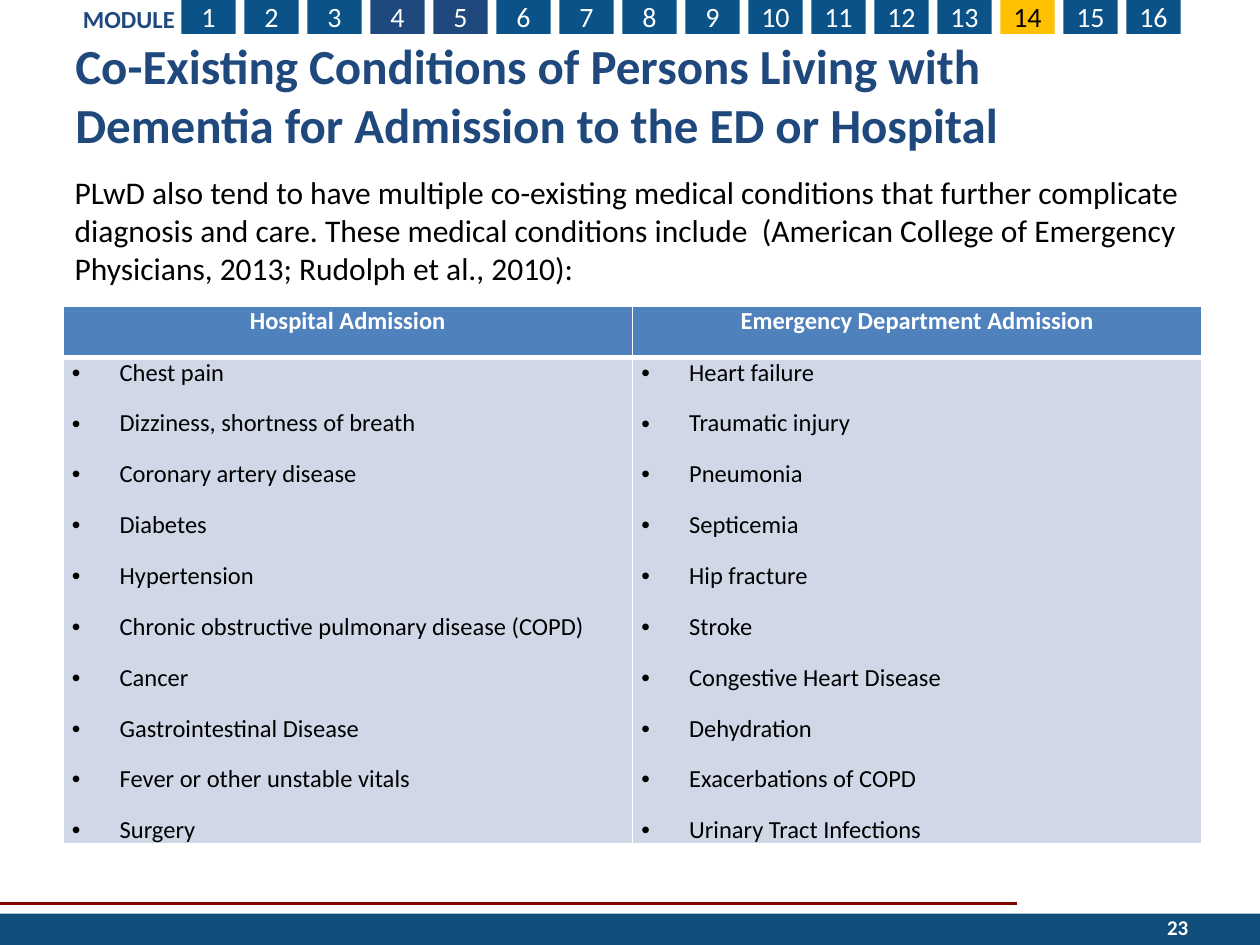
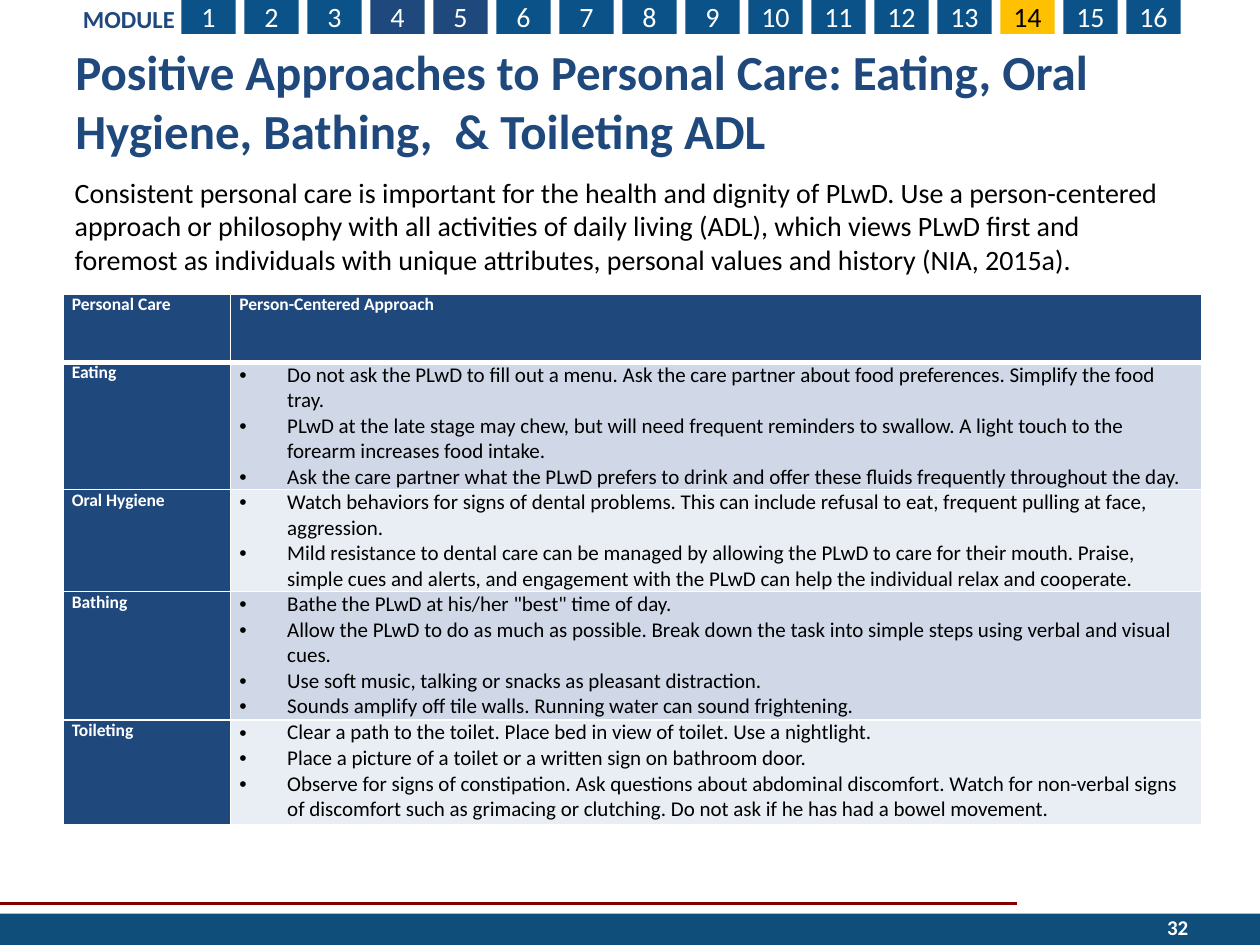
from collections import namedtuple

from lxml.etree import SubElement as Sub
from pptx import Presentation
from pptx.dml.color import RGBColor as Rgb
from pptx.enum.shapes import MSO_CONNECTOR as Connector, MSO_SHAPE as Shape
from pptx.enum.text import MSO_ANCHOR as Anchor, PP_ALIGN as Align
from pptx.oxml.ns import qn
from pptx.util import Emu, Inches, Pt

COLORS = {
    "white": "FFFFFF", "black": "000000", "navy": "1F497D", "tab": "0A5287",
    "current": "FFC000", "footer": "0F4D7B", "rule": "800000",
    "header": "4F81BD", "band": "D0D8E8", "light": "E9EDF4",
}
FONT, BULLET_FONT = "Calibri", "Arial"
WIDTH, HEIGHT = Inches(10), Inches(7.5)
COLUMNS, ROWS = 100, 75
MODULES, CURRENT, NAVY_MODULES = 16, 14, (4, 5)
HANG = Inches(0.38)

Box = namedtuple("Box", "left top width height")
NAVIGATION = Box(5.6, -0.1, 88.1, 2.8)
FOOTER = Box(0, 71.6, 100, 3.4)


def col(count):
    """Return the length of a number of grid columns."""
    return Emu(round(WIDTH * count / COLUMNS))


def row(count):
    """Return the length of a number of grid rows."""
    return Emu(round(HEIGHT * count / ROWS))


def place(box):
    """Return a grid box as the four lengths that shapes take."""
    return col(box.left), row(box.top), col(box.width), row(box.height)


def color(name):
    """Return a named colour."""
    return Rgb.from_string(COLORS[name])


def add_bullet(para):
    """Give a paragraph a hanging round bullet."""
    properties = para._p.get_or_add_pPr()
    properties.set("marL", str(HANG))
    properties.set("indent", str(-HANG))
    Sub(properties, qn("a:buFont")).set("typeface", BULLET_FONT)
    Sub(properties, qn("a:buChar")).set("char", "•")


def write(frame, lines, size, ink="black", bold=False, align=Align.LEFT,
          bullet=False, before=0, after=0):
    """Write lines of text into a frame, one paragraph each."""
    for index, line in enumerate(lines):
        para = frame.add_paragraph() if index else frame.paragraphs[0]
        if bullet:
            add_bullet(para)
        para.alignment = align
        para.space_before = Pt(before if index else 0)
        para.space_after = Pt(after)
        span = para.add_run()
        span.text = line
        span.font.name, span.font.size, span.font.bold = FONT, Pt(size), bold
        span.font.color.rgb = color(ink)


def add_text(page, box, text, anchor=Anchor.TOP, **style):
    """Add a wrapped text box."""
    frame = page.shapes.add_textbox(*place(box)).text_frame
    frame.word_wrap = True
    frame.vertical_anchor = anchor
    write(frame, [text], **style)


def add_block(page, box, fill):
    """Add a plain filled rectangle and return it."""
    block = page.shapes.add_shape(Shape.RECTANGLE, *place(box))
    block.shadow.inherit = False
    block.fill.solid()
    block.fill.fore_color.rgb = color(fill)
    block.line.fill.background()
    return block


def add_navigation(page, box):
    """Place the module label and its numbered tabs along a box."""
    pitch, tab_width = 5, 4.3
    start = box.left + box.width - (MODULES - 1) * pitch - tab_width
    for number in range(1, MODULES + 1):
        current = number == CURRENT
        fill = "current" if current else "navy" if number in NAVY_MODULES else "tab"
        left = start + (number - 1) * pitch
        tab = add_block(page, Box(left, box.top, tab_width, box.height), fill)
        frame = tab.text_frame
        frame.margin_left = frame.margin_right = 0
        frame.margin_top = frame.margin_bottom = 0
        frame.vertical_anchor = Anchor.MIDDLE
        write(frame, [str(number)], size=16, align=Align.CENTER,
              ink="black" if current else "white")
    add_text(page, Box(box.left, box.top - 0.1, 10.1, 3.4), "MODULE",
             size=14, ink="navy", bold=True)


def add_footer(page, box, number):
    """Place the rule, the band and the page number in a box."""
    rule_y = row(box.top + 0.1)
    rule = page.shapes.add_connector(Connector.STRAIGHT, col(box.left), rule_y,
                                     col(box.left + 80.7), rule_y)
    rule.line.color.rgb = color("rule")
    rule.line.width = Pt(1.5)
    Sub(rule._element.spPr, qn("a:effectLst"))
    add_block(page, Box(box.left, box.top + 0.9, box.width, 2.5), "footer")
    add_text(page, Box(box.left + 72, box.top, 23.3, 4), str(number), Anchor.MIDDLE,
             size=12, ink="white", bold=True, align=Align.RIGHT)


def add_borders(cell, top, bottom):
    """Draw white borders round a table cell."""
    properties = cell._tc.get_or_add_tcPr()
    for side, width in (("L", 1), ("R", 1), ("T", top), ("B", bottom)):
        line = Sub(properties, qn(f"a:ln{side}"), w=str(Pt(width)))
        fill = Sub(line, qn("a:solidFill"))
        Sub(fill, qn("a:srgbClr"), val=COLORS["white"])


def fill_cell(cell, lines, fill, top=1, bottom=1, **style):
    """Set the borders, fill and text of a table cell."""
    add_borders(cell, top, bottom)
    cell.fill.solid()
    cell.fill.fore_color.rgb = color(fill)
    cell.margin_left = cell.margin_right = Inches(0.07)
    cell.margin_top = cell.margin_bottom = 0
    write(cell.text_frame, lines, **style)


def add_grid(page, box, widths, heights):
    """Add an unstyled table with the given column and row sizes."""
    table = page.shapes.add_table(len(heights), len(widths), *place(box)).table
    table.horz_banding = table.first_row = False
    for column, width in zip(table.columns, widths):
        column.width = col(width)
    for line, height in zip(table.rows, heights):
        line.height = row(height)
    return table


def add_admission_table(page, box, lists):
    """Place equal columns of bulleted conditions under headings."""
    head = 4.1
    table = add_grid(page, box, [box.width / len(lists)] * len(lists),
                     [head, box.height - head])
    for index, (heading, conditions) in enumerate(lists.items()):
        fill_cell(table.cell(0, index), [heading], "header", bottom=3, size=14,
                  ink="white", bold=True, align=Align.CENTER, after=6)
        fill_cell(table.cell(1, index), conditions, "band", top=3, size=14,
                  bullet=True, before=6, after=6)


def add_care_table(page, box, headings, care):
    """Place labelled rows of bulleted advice under a heading row."""
    label = {"size": 10, "ink": "white", "bold": True}
    label_width = 13.3
    table = add_grid(page, box, [label_width, box.width - label_width],
                     [5.4, 10.1, 8.1, 10.2, 8.3])
    for index, heading in enumerate(headings):
        fill_cell(table.cell(0, index), [heading], "navy", bottom=3, **label)
    for index, (activity, advice) in enumerate(care.items(), 1):
        top = 3 if index == 1 else 1
        fill_cell(table.cell(index, 0), [activity], "navy", top=top, **label)
        fill_cell(table.cell(index, 1), advice, "band" if index % 2 else "light",
                  top=top, size=12, bullet=True)


def add_page(deck, number, title, title_box, intro, intro_box, intro_size):
    """Add a slide with the shared bands, a title and an introduction."""
    page = deck.slides.add_slide(deck.slide_layouts[6])
    add_footer(page, FOOTER, number)
    add_navigation(page, NAVIGATION)
    add_text(page, title_box, title, Anchor.MIDDLE, size=28, ink="navy", bold=True)
    add_text(page, intro_box, intro, size=intro_size)
    return page


ADMISSIONS = {
    "Hospital Admission": [
        "Chest pain", "Dizziness, shortness of breath", "Coronary artery disease",
        "Diabetes", "Hypertension", "Chronic obstructive pulmonary disease (COPD)",
        "Cancer", "Gastrointestinal Disease", "Fever or other unstable vitals",
        "Surgery",
    ],
    "Emergency Department Admission": [
        "Heart failure", "Traumatic injury", "Pneumonia", "Septicemia",
        "Hip fracture", "Stroke", "Congestive Heart Disease", "Dehydration",
        "Exacerbations of COPD", "Urinary Tract Infections",
    ],
}
CARE = {
    "Eating": [
        "Do not ask the PLwD to fill out a menu. Ask the care partner about food "
        "preferences. Simplify the food tray.",
        "PLwD at the late stage may chew, but will need frequent reminders to "
        "swallow. A light touch to the forearm increases food intake.",
        "Ask the care partner what the PLwD prefers to drink and offer these "
        "fluids frequently throughout the day.",
    ],
    "Oral Hygiene": [
        "Watch behaviors for signs of dental problems. This can include refusal to "
        "eat, frequent pulling at face, aggression.",
        "Mild resistance to dental care can be managed by allowing the PLwD to care "
        "for their mouth. Praise, simple cues and alerts, and engagement with the "
        "PLwD can help the individual relax and cooperate.",
    ],
    "Bathing": [
        'Bathe the PLwD at his/her "best" time of day.',
        "Allow the PLwD to do as much as possible. Break down the task into simple "
        "steps using verbal and visual cues.",
        "Use soft music, talking or snacks as pleasant distraction.",
        "Sounds amplify off tile walls. Running water can sound frightening.",
    ],
    "Toileting": [
        "Clear a path to the toilet. Place bed in view of toilet. Use a nightlight.",
        "Place a picture of a toilet or a written sign on bathroom door.",
        "Observe for signs of constipation. Ask questions about abdominal "
        "discomfort. Watch for non-verbal signs of discomfort such as grimacing or "
        "clutching. Do not ask if he has had a bowel movement.",
    ],
}


def main():
    """Build both slides and save the deck."""
    deck = Presentation()
    deck.slide_width, deck.slide_height = WIDTH, HEIGHT
    page = add_page(
        deck, 23,
        "Co-Existing Conditions of Persons Living with Dementia for Admission to "
        "the ED or Hospital", Box(5, 1.7, 90, 11.6),
        "PLwD also tend to have multiple co-existing medical conditions that "
        "further complicate diagnosis and care. These medical conditions include  "
        "(American College of Emergency Physicians, 2013; Rudolph et al., 2010):",
        Box(4.95, 13.25, 90.4, 10.1), 18)
    add_admission_table(page, Box(5, 24.3, 90.4, 42.7), ADMISSIONS)
    page = add_page(
        deck, 32,
        "Positive Approaches to Personal Care: Eating, Oral Hygiene, Bathing,  & "
        "Toileting ADL", Box(5, 2.5, 90, 10.9),
        "Consistent personal care is important for the health and dignity of PLwD. "
        "Use a person-centered approach or philosophy with all activities of daily "
        "living (ADL), which views PLwD first and foremost as individuals with "
        "unique attributes, personal values and history (NIA, 2015a).",
        Box(4.95, 13.4, 90.4, 9.1), 16)
    add_care_table(page, Box(5, 23.35, 90.4, 42.1),
                   ["Personal Care", "Person-Centered Approach"], CARE)
    deck.save("out.pptx")


if __name__ == "__main__":
    main()
